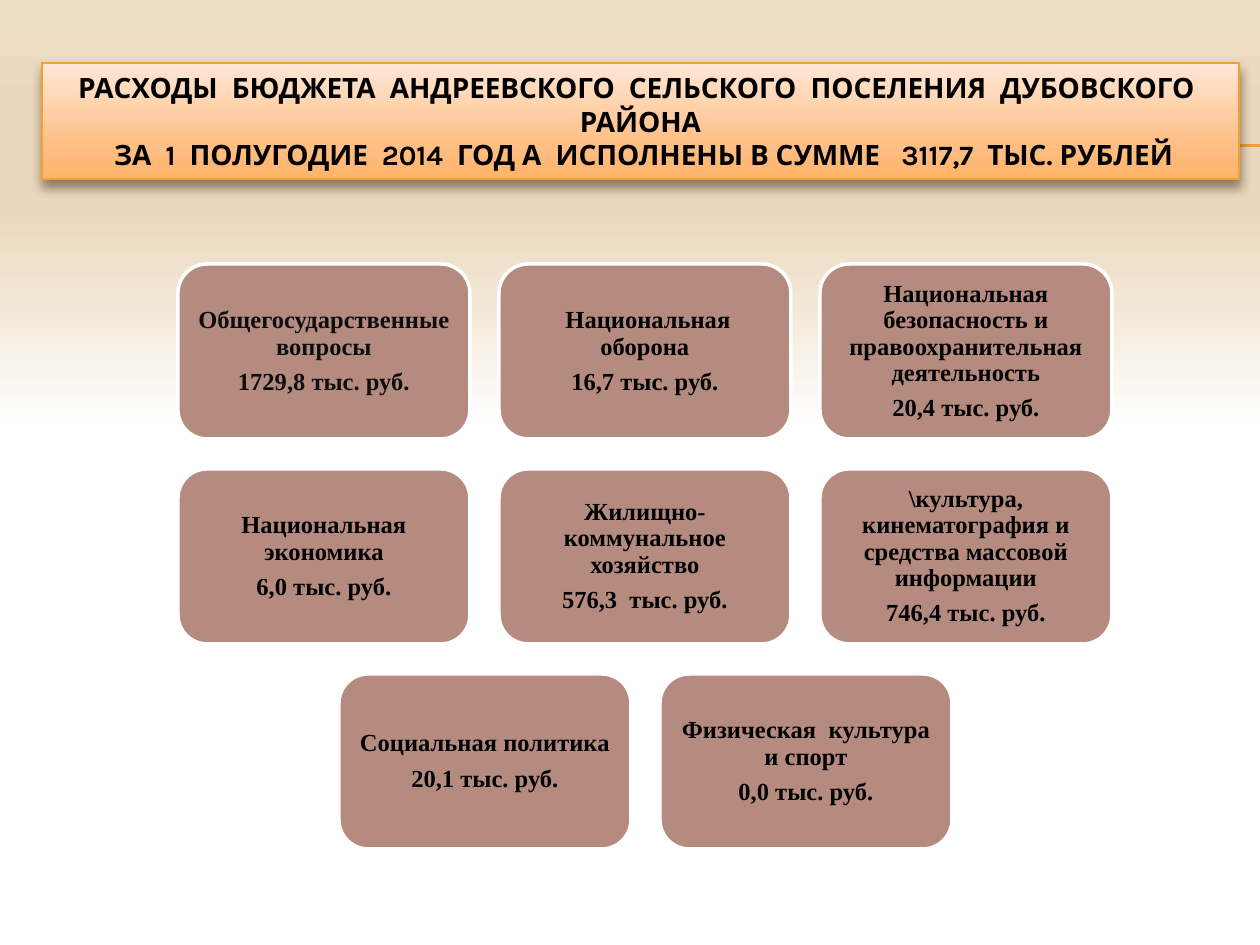
from lxml.etree import SubElement
from pptx import Presentation
from pptx.dml.color import RGBColor
from pptx.enum.shapes import MSO_CONNECTOR as Connector, MSO_SHAPE as Shape
from pptx.enum.text import MSO_ANCHOR as Anchor, MSO_AUTO_SIZE as AutoSize, PP_ALIGN as Align
from pptx.oxml.ns import qn
from pptx.util import Emu, Pt

PX_PER_INCH = 126
SLIDE_W, SLIDE_H = 1260, 945
CARD_W, CARD_H = 292, 175
PITCH_X, PITCH_Y = 321, 205
GRID_CENTER, GRID_TOP = 645, 264

TITLE_LINES = [
    "РАСХОДЫ  БЮДЖЕТА  АНДРЕЕВСКОГО  СЕЛЬСКОГО  ПОСЕЛЕНИЯ  ДУБОВСКОГО  РАЙОНА",
    " ЗА  1  ПОЛУГОДИЕ  2014  ГОД А  ИСПОЛНЕНЫ В СУММЕ   3117,7  ТЫС. РУБЛЕЙ",
]
EXPENSE_ROWS = [
    [("Общегосударственные вопросы", "1729,8 тыс. руб.", "0D0D0D"),
     (" Национальная оборона", "16,7 тыс. руб.", "000000"),
     ("Национальная безопасность и правоохранительная деятельность", "20,4 тыс. руб.", "000000")],
    [("Национальная экономика", "6,0 тыс. руб.", "000000"),
     ("Жилищно-коммунальное хозяйство", "576,3  тыс. руб.", "000000"),
     ("\\культура, кинематография и средства массовой информации", "746,4 тыс. руб.", "000000")],
    [("Социальная политика", "20,1 тыс. руб.", "000000"),
     ("Физическая  культура и спорт", "0,0 тыс. руб.", "000000")],
]


def px(length):
    return Emu(round(length * 914400 / PX_PER_INCH))


def rgb(color):
    return RGBColor.from_string(color)


def fill_downward(fill, stops):
    """Fill with a top-to-bottom gradient of (percent, colour) stops."""
    fill.gradient()
    fill.gradient_angle = 270
    stop_list = fill._fill._gradFill.find(qn("a:gsLst"))
    for old_stop in list(stop_list):
        stop_list.remove(old_stop)
    for percent, color in stops:
        stop = SubElement(stop_list, qn("a:gs"), pos=str(percent * 1000))
        SubElement(stop, qn("a:srgbClr"), val=color)


class BudgetSlide:
    accent = "F0A22E"
    card_fill = "B58B80"
    title_font = "Karla"
    card_font = "Times New Roman"

    def __init__(self, slide):
        self.slide = slide

    def background(self, stops):
        fill_downward(self.slide.background.fill, stops)

    def rule(self, y):
        """Draw a horizontal line behind everything else."""
        line = self.slide.shapes.add_connector(
            Connector.STRAIGHT, px(71), px(y), px(SLIDE_W), px(y))
        line.line.color.rgb = rgb(self.accent)
        line.line.width = Pt(0.75)
        SubElement(line._element.spPr, qn("a:effectLst"))
        self.slide.shapes._spTree.insert(2, line._element)

    def text_run(self, paragraph, text, font, size, color):
        run = paragraph.add_run()
        run.text = text
        run.font.name = font
        run.font.size = Pt(size)
        run.font.bold = True
        run.font.color.rgb = rgb(color)

    def title(self, lines, left, top, width, height):
        banner = self.slide.shapes.title
        banner.left, banner.top = px(left), px(top)
        banner.width, banner.height = px(width), px(height)
        fill_downward(banner.fill, [(0, "FFE7D7"), (72, "FFBE84"), (100, "FFB468")])
        banner.line.color.rgb = rgb(self.accent)
        banner.line.width = Pt(0.79)
        self.drop_shadow(banner, "4E3B30", 60)
        frame = banner.text_frame
        frame.auto_size = AutoSize.NONE
        frame.word_wrap = True
        frame.vertical_anchor = Anchor.MIDDLE
        paragraph = frame.paragraphs[0]
        paragraph.alignment = Align.CENTER
        for index, line in enumerate(lines):
            if index:
                paragraph.add_line_break()
            self.text_run(paragraph, line, self.title_font, 16, "000000")

    def drop_shadow(self, shape, color, opacity):
        effects = SubElement(shape._element.spPr, qn("a:effectLst"))
        shadow = SubElement(effects, qn("a:outerShdw"), blurRad=str(Pt(6)),
                            dist=str(Pt(4)), dir="5400000", rotWithShape="0")
        shade = SubElement(shadow, qn("a:srgbClr"), val=color)
        SubElement(shade, qn("a:alpha"), val=str(opacity * 1000))

    def card(self, left, top, name, amount, color):
        card = self.slide.shapes.add_shape(
            Shape.FLOWCHART_ALTERNATE_PROCESS, px(left), px(top), px(CARD_W), px(CARD_H))
        card.shadow.inherit = False
        card.fill.solid()
        card.fill.fore_color.rgb = rgb(self.card_fill)
        card.line.color.rgb = rgb("FFFFFF")
        card.line.width = Pt(2)
        frame = card.text_frame
        frame.word_wrap = True
        frame.vertical_anchor = Anchor.MIDDLE
        frame.margin_left = frame.margin_right = px(8)
        frame.margin_top = frame.margin_bottom = px(8)
        for paragraph, text in ((frame.paragraphs[0], name), (frame.add_paragraph(), amount)):
            paragraph.alignment = Align.CENTER
            paragraph.line_spacing = 0.9
            paragraph.space_after = Pt(5)
            self.text_run(paragraph, text, self.card_font, 14, color)

    def card_rows(self, rows):
        """Lay out rows of cards, each centred on the grid."""
        for row_index, row in enumerate(rows):
            row_width = (len(row) - 1) * PITCH_X + CARD_W
            row_left = GRID_CENTER - row_width // 2
            for column, expense in enumerate(row):
                self.card(row_left + column * PITCH_X, GRID_TOP + row_index * PITCH_Y, *expense)


def main():
    deck = Presentation()
    deck.slide_width, deck.slide_height = px(SLIDE_W), px(SLIDE_H)
    budget = BudgetSlide(deck.slides.add_slide(deck.slide_layouts[5]))
    budget.background([(0, "EEDDC5"), (12, "EAD8BC"), (23, "EBDABF"),
                       (30, "F1E4D0"), (45, "FFFFFF"), (100, "FFFFFF")])
    for y in (146, 145):
        budget.rule(y)
    budget.title(TITLE_LINES, 42, 63, 1197, 116)
    budget.card_rows(EXPENSE_ROWS)
    deck.save("out.pptx")


if __name__ == "__main__":
    main()
